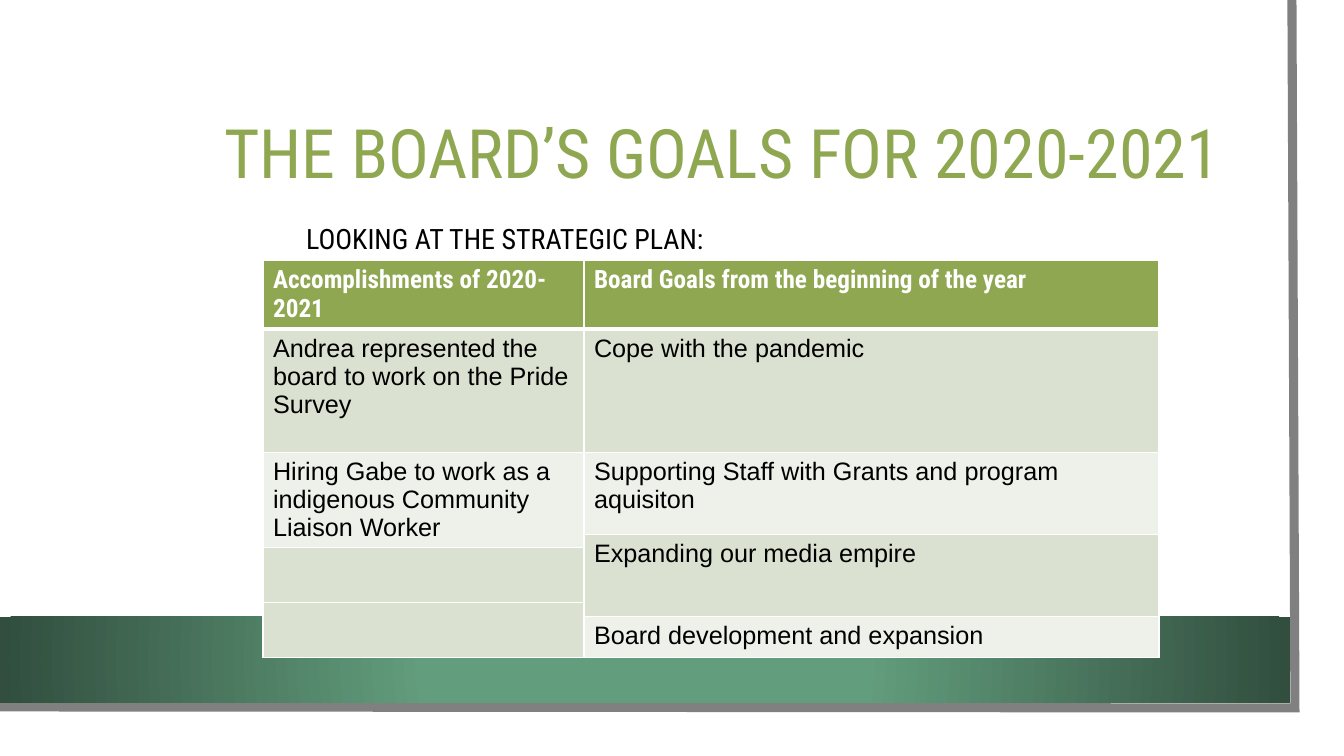
from typing import NamedTuple

from lxml.etree import SubElement
from pptx import Presentation
from pptx.dml.color import RGBColor
from pptx.enum.shapes import MSO_SHAPE
from pptx.enum.text import MSO_ANCHOR, MSO_AUTO_SIZE, PP_ALIGN
from pptx.oxml import parse_xml
from pptx.oxml.ns import nsdecls, qn
from pptx.util import Emu, Pt

WHITE = RGBColor(0xFF, 0xFF, 0xFF)
BLACK = RGBColor(0x00, 0x00, 0x00)
GREY = RGBColor(0x80, 0x80, 0x80)
OLIVE = RGBColor(0x8F, 0xA7, 0x51)
SAGE = RGBColor(0xDB, 0xE1, 0xD0)
MIST = RGBColor(0xEE, 0xF1, 0xE9)
TEAL = RGBColor(0x62, 0x9D, 0x7D)
PINE = RGBColor(0x31, 0x4E, 0x3E)
HEADING_FONT = "Roboto Condensed"
TABLE_FONT = "Arial"

PAGE_WIDTH, PAGE_HEIGHT = 1344, 756
EMU_PER_PX = 12192000 / PAGE_WIDTH


class Goal(NamedTuple):
    row: int
    column: int
    text: str
    fill: RGBColor
    row_span: int = 1


COLUMN_WIDTHS = [321, 575]
ROW_HEIGHTS = [68, 123, 82, 13, 55, 14, 41]
GOALS = [
    Goal(0, 0, "Accomplishments of 2020-2021", OLIVE),
    Goal(0, 1, "Board Goals from the beginning of the year", OLIVE),
    Goal(1, 0, "Andrea represented the board to work on the Pride Survey", SAGE),
    Goal(1, 1, "Cope with the pandemic", SAGE),
    Goal(2, 0, "Hiring Gabe to work as a indigenous Community Liaison Worker", MIST, 2),
    Goal(2, 1, "Supporting Staff with Grants and program aquisiton", MIST),
    Goal(3, 1, "Expanding our media empire", SAGE, 3),
    Goal(4, 0, "", SAGE),
    Goal(5, 0, "", SAGE, 2),
    Goal(6, 1, "Board development and expansion", MIST),
]


def px(length: int) -> Emu:
    return Emu(round(length * EMU_PER_PX))


def write(frame, text: str, *, size: float, font: str, color: RGBColor,
          bold: bool = False, spacing: float = 1.0):
    para = frame.paragraphs[0]
    para.alignment = PP_ALIGN.LEFT
    para.line_spacing = spacing
    para.space_before = Pt(0)
    if text:
        span = para.add_run()
        span.text = text
        span.font.size = Pt(size)
        span.font.name = font
        span.font.bold = bold
        span.font.color.rgb = color
    return para


def add_rectangle(page, left: int, top: int, width: int, height: int):
    box = page.shapes.add_shape(MSO_SHAPE.RECTANGLE,
                                px(left), px(top), px(width), px(height))
    box.shadow.inherit = False
    box.line.fill.background()
    return box


def place(holder, left: int, top: int, width: int, height: int):
    """Set the placeholder's place and bring it in front of the backdrop."""
    holder.left, holder.top = px(left), px(top)
    holder.width, holder.height = px(width), px(height)
    holder.element.getparent().append(holder.element)
    frame = holder.text_frame
    frame.word_wrap = True
    frame.auto_size = MSO_AUTO_SIZE.NONE
    frame.vertical_anchor = MSO_ANCHOR.MIDDLE
    return frame


def set_borders(cell, row: int) -> None:
    properties = cell._tc.get_or_add_tcPr()
    widths = {"lnL": 1, "lnR": 1,
              "lnT": 3 if row == 1 else 1, "lnB": 3 if row == 0 else 1}
    for position, (side, width) in enumerate(widths.items()):
        line = parse_xml(
            f'<a:{side} {nsdecls("a")} w="{Pt(width)}"><a:solidFill>'
            f'<a:srgbClr val="{WHITE}"/></a:solidFill></a:{side}>')
        properties.insert(position, line)


def add_backdrop(page) -> None:
    sheet = add_rectangle(page, 0, 0, 1320, 733)
    sheet.fill.solid()
    sheet.fill.fore_color.rgb = WHITE

    # Grey edge along the right and bottom
    builder = page.shapes.build_freeform(px(1292), 0)
    builder.add_line_segments([(px(1295), px(708)), (0, px(707))], close=False)
    edge = builder.convert_to_shape()
    edge.shadow.inherit = False
    edge.fill.background()
    edge.line.color.rgb = GREY
    edge.line.width = Pt(6.5)
    SubElement(edge.line._get_or_add_ln(), qn("a:miter"), lim="800000")

    # Green band with a radial gradient
    band = add_rectangle(page, 0, 617, 1290, 86)
    band.fill.background()
    no_fill = band.element.spPr.find(qn("a:noFill"))
    no_fill.getparent().replace(no_fill, parse_xml(
        f'<a:gradFill {nsdecls("a")} rotWithShape="1"><a:gsLst>'
        f'<a:gs pos="34000"><a:srgbClr val="{TEAL}"/></a:gs>'
        f'<a:gs pos="100000"><a:srgbClr val="{PINE}"/></a:gs></a:gsLst>'
        '<a:path path="circle">'
        '<a:fillToRect l="50000" t="50000" r="50000" b="50000"/></a:path>'
        '</a:gradFill>'))


def add_headings(page) -> None:
    title, body = page.placeholders
    write(place(title, 214, 85, 1054, 142), "THE BOARD’S GOALS FOR 2020-2021",
          size=48.6, font=HEADING_FONT, color=OLIVE, spacing=0.9)

    frame = place(body, 296, 217, 860, 75)
    frame.margin_bottom = px(37)
    para = write(frame, "LOOKING AT THE STRATEGIC PLAN:",
                 size=20, font=HEADING_FONT, color=BLACK)
    properties = para._p.get_or_add_pPr()
    properties.set("marL", "0")
    properties.set("indent", "0")
    SubElement(properties, qn("a:buNone"))


def add_goals_table(page) -> None:
    table = page.shapes.add_table(
        len(ROW_HEIGHTS), len(COLUMN_WIDTHS), px(263), px(260),
        px(sum(COLUMN_WIDTHS)), px(sum(ROW_HEIGHTS))).table
    for column, width in zip(table.columns, COLUMN_WIDTHS):
        column.width = px(width)
    for row, height in zip(table.rows, ROW_HEIGHTS):
        row.height = px(height)

    for goal in GOALS:
        cell = table.cell(goal.row, goal.column)
        last_row = goal.row + goal.row_span - 1
        if goal.row_span > 1:
            cell.merge(table.cell(last_row, goal.column))
        header = goal.row == 0
        write(cell.text_frame, goal.text, size=18, bold=header,
              font=HEADING_FONT if header else TABLE_FONT,
              color=WHITE if header else BLACK)
        for row in range(goal.row, last_row + 1):
            part = table.cell(row, goal.column)
            part.fill.solid()
            part.fill.fore_color.rgb = goal.fill
            set_borders(part, row)


def main() -> None:
    deck = Presentation()
    deck.slide_width, deck.slide_height = px(PAGE_WIDTH), px(PAGE_HEIGHT)
    page = deck.slides.add_slide(deck.slide_layouts[1])
    add_backdrop(page)
    add_headings(page)
    add_goals_table(page)
    deck.save("out.pptx")


if __name__ == "__main__":
    main()
